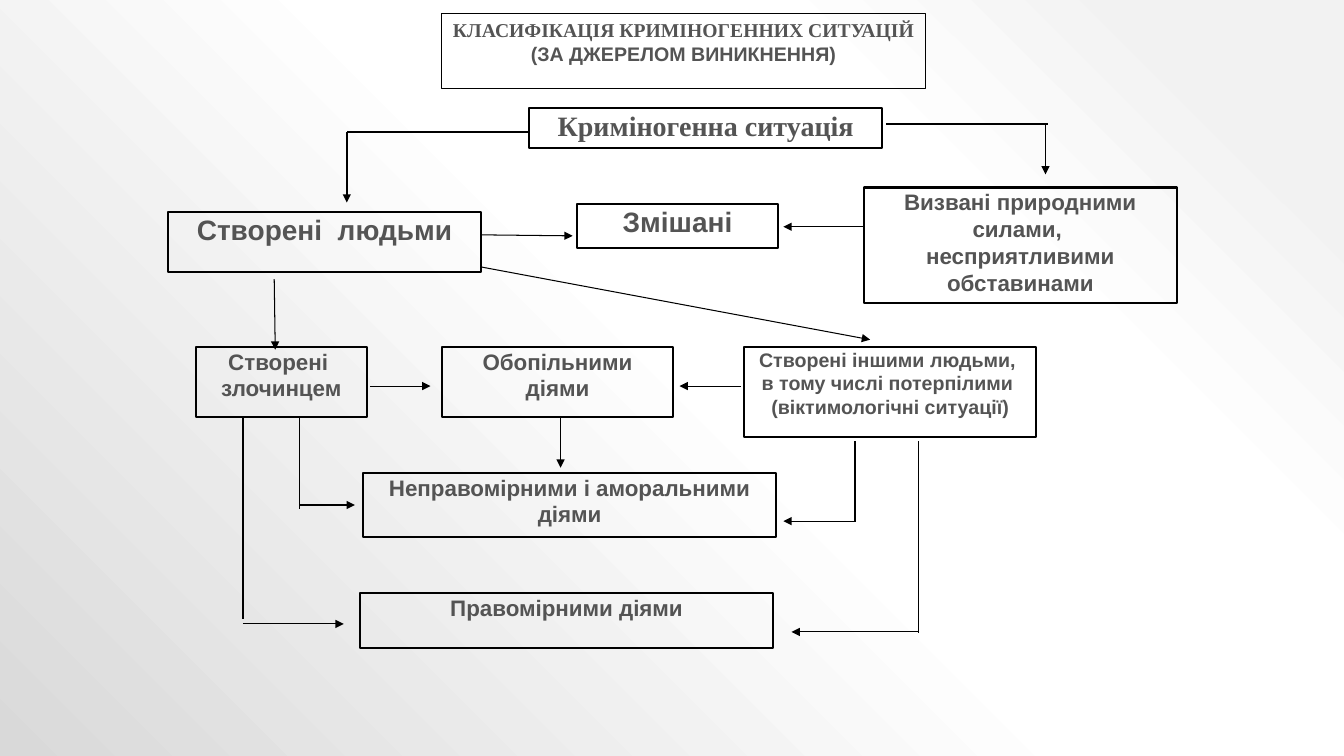
"""Build a slide that classifies criminogenic situations by their source."""
from dataclasses import dataclass

from lxml import etree
from pptx import Presentation
from pptx import util as u
from pptx.dml.color import RGBColor
from pptx.enum import shapes, text
from pptx.oxml.ns import qn

BLACK = RGBColor(0x00, 0x00, 0x00)
GREY = RGBColor(0x54, 0x54, 0x54)
BACKGROUND_STOPS = (
    (10, RGBColor(0xF2, 0xF2, 0xF2)),
    (28, RGBColor(0xFF, 0xFF, 0xFF)),
    (48, RGBColor(0xFF, 0xFF, 0xFF)),
    (100, RGBColor(0xD9, 0xD9, 0xD9)),
)
SERIF, SANS = "Times New Roman", "Arial"


@dataclass(frozen=True)
class Box:
    left: float
    top: float
    width: float
    height: float
    lines: tuple[str, ...]
    size: int = 16
    fonts: tuple[str, ...] = (SANS,)
    border: float = 1.5
    inset: float = 0.01


@dataclass(frozen=True)
class Line:
    x1: float
    y1: float
    x2: float
    y2: float
    width: float = 0.75
    arrow: bool = True


TITLE = Box(4.38, 0.13, 4.8, 0.75,
            ("КЛАСИФІКАЦІЯ КРИМІНОГЕННИХ СИТУАЦІЙ", "(ЗА ДЖЕРЕЛОМ ВИНИКНЕННЯ)"),
            14, (SERIF, SANS), 0.75, 0.05)

BOXES = (
    Box(5.25, 1.07, 3.5, 0.4, ("Криміногенна ситуація",), 20, (SERIF,)),
    Box(5.72, 2.02, 2, 0.44, ("Змішані",), 20),
    Box(1.67, 2.1, 3.1, 0.6, ("Створені  людьми",), 20),
    Box(8.57, 1.86, 3.1, 1.15,
        ("Визвані природними силами, ", "несприятливими обставинами")),
    Box(1.94, 3.44, 1.7, 0.7, ("Створені ", "злочинцем")),
    Box(4.38, 3.44, 2.3, 0.7, ("Обопільними", "діями")),
    Box(7.38, 3.44, 2.9, 0.9,
        ("Створені іншими людьми, ", "в тому числі потерпілими ",
         "(віктимологічні ситуації)"), 14),
    Box(3.6, 4.69, 4.1, 0.64, ("Неправомірними і аморальними діями",)),
    Box(3.57, 5.88, 4.1, 0.55, ("Правомірними діями",)),
)

LINES = (
    Line(5.24, 1.31, 3.44, 1.31, 1, False),
    Line(3.44, 1.31, 3.44, 2.01, 1),
    Line(10.39, 1.23, 8.79, 1.23, 1, False),
    Line(10.37, 1.23, 10.37, 1.73, 1),
    Line(4.78, 2.33, 5.68, 2.34),
    Line(8.56, 2.25, 7.77, 2.25),
    Line(2.72, 2.77, 2.73, 3.47),
    Line(4.78, 2.65, 8.63, 3.37),
    Line(3.67, 3.83, 4.27, 3.83),
    Line(7.35, 3.83, 6.74, 3.83),
    Line(5.56, 4.14, 5.56, 4.64),
    Line(2.97, 4.14, 2.97, 5.05, 1, False),
    Line(2.97, 5.01, 3.52, 5.01),
    Line(2.41, 4.14, 2.41, 6.14, 1, False),
    Line(2.41, 6.19, 3.41, 6.19),
    Line(8.48, 4.38, 8.48, 5.18, 0.75, False),
    Line(8.47, 5.17, 7.77, 5.17),
    Line(9.11, 4.38, 9.11, 6.28, 1, False),
    Line(9.11, 6.27, 7.85, 6.27),
)


def set_all(target: object, values: dict[str, object]) -> None:
    for name, value in values.items():
        setattr(target, name, value)


def paint_background(s) -> None:
    s.background.fill.gradient()
    grad = s.element.find(".//" + qn("a:gradFill"))
    for child in list(grad):
        grad.remove(child)
    stops = etree.SubElement(grad, qn("a:gsLst"))
    for position, color in BACKGROUND_STOPS:
        stop = etree.SubElement(stops, qn("a:gs"), pos=str(position * 1000))
        etree.SubElement(stop, qn("a:srgbClr"), val=str(color))
    circle = etree.SubElement(grad, qn("a:path"), path="circle")
    etree.SubElement(circle, qn("a:fillToRect"), l="100000", b="100000")


def format_box(sp, box: Box) -> None:
    set_all(sp, {"left": u.Inches(box.left), "top": u.Inches(box.top),
                 "width": u.Inches(box.width), "height": u.Inches(box.height)})
    sp.fill.background()
    sp.line.color.rgb = BLACK
    sp.line.width = u.Pt(box.border)
    tf = sp.text_frame
    side = 0.1 if box is TITLE else box.inset
    set_all(tf, {"word_wrap": True, "auto_size": text.MSO_AUTO_SIZE.NONE,
                 "vertical_anchor": text.MSO_ANCHOR.TOP,
                 "margin_left": u.Inches(side), "margin_right": u.Inches(side),
                 "margin_top": u.Inches(box.inset),
                 "margin_bottom": u.Inches(box.inset)})
    for i, line in enumerate(box.lines):
        p = tf.paragraphs[0] if i == 0 else tf.add_paragraph()
        p.alignment = text.PP_ALIGN.CENTER
        r = p.add_run()
        r.text = line
        set_all(r.font, {"name": box.fonts[min(i, len(box.fonts) - 1)],
                         "size": u.Pt(box.size), "bold": True})
        r.font.color.rgb = GREY


def add_box(s, box: Box) -> None:
    sp = s.shapes.add_shape(shapes.MSO_SHAPE.RECTANGLE, 0, 0, 0, 0)
    sp.shadow.inherit = False
    format_box(sp, box)


def add_line(s, line: Line) -> None:
    ends = (u.Inches(v) for v in (line.x1, line.y1, line.x2, line.y2))
    sp = s.shapes.add_connector(shapes.MSO_CONNECTOR.STRAIGHT, *ends)
    sp.line.color.rgb = BLACK
    sp.line.width = u.Pt(line.width)
    properties = sp.element.spPr
    if line.arrow:
        etree.SubElement(properties.find(qn("a:ln")), qn("a:tailEnd"), type="triangle")
    etree.SubElement(properties, qn("a:effectLst"))


def main() -> None:
    prs = Presentation()
    set_all(prs, {"slide_width": u.Inches(13.33), "slide_height": u.Inches(7.5)})
    s = prs.slides.add_slide(prs.slide_layouts[5])
    paint_background(s)
    format_box(s.shapes.title, TITLE)
    for box in BOXES:
        add_box(s, box)
    for line in LINES:
        add_line(s, line)
    prs.save("out.pptx")


if __name__ == "__main__":
    main()
